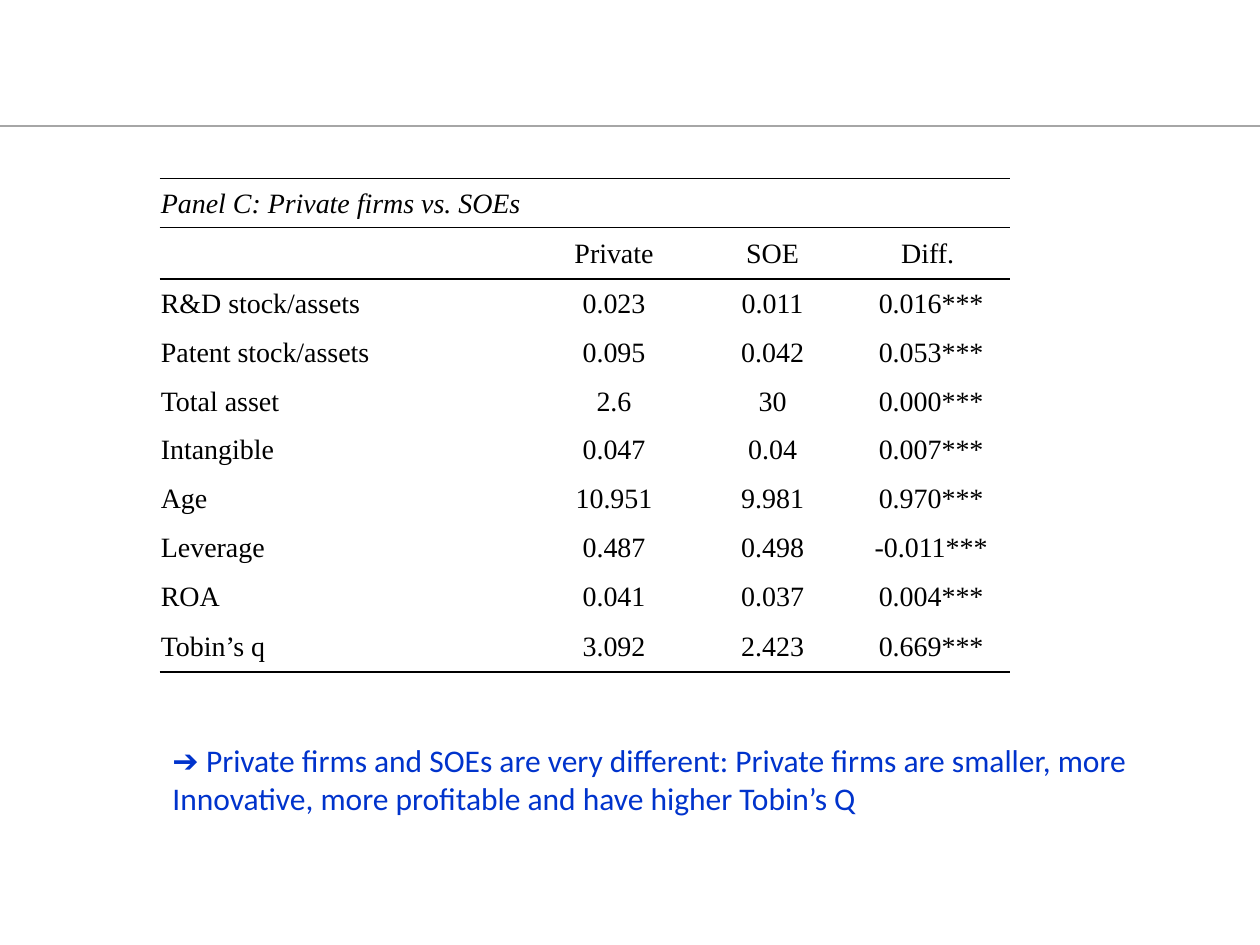
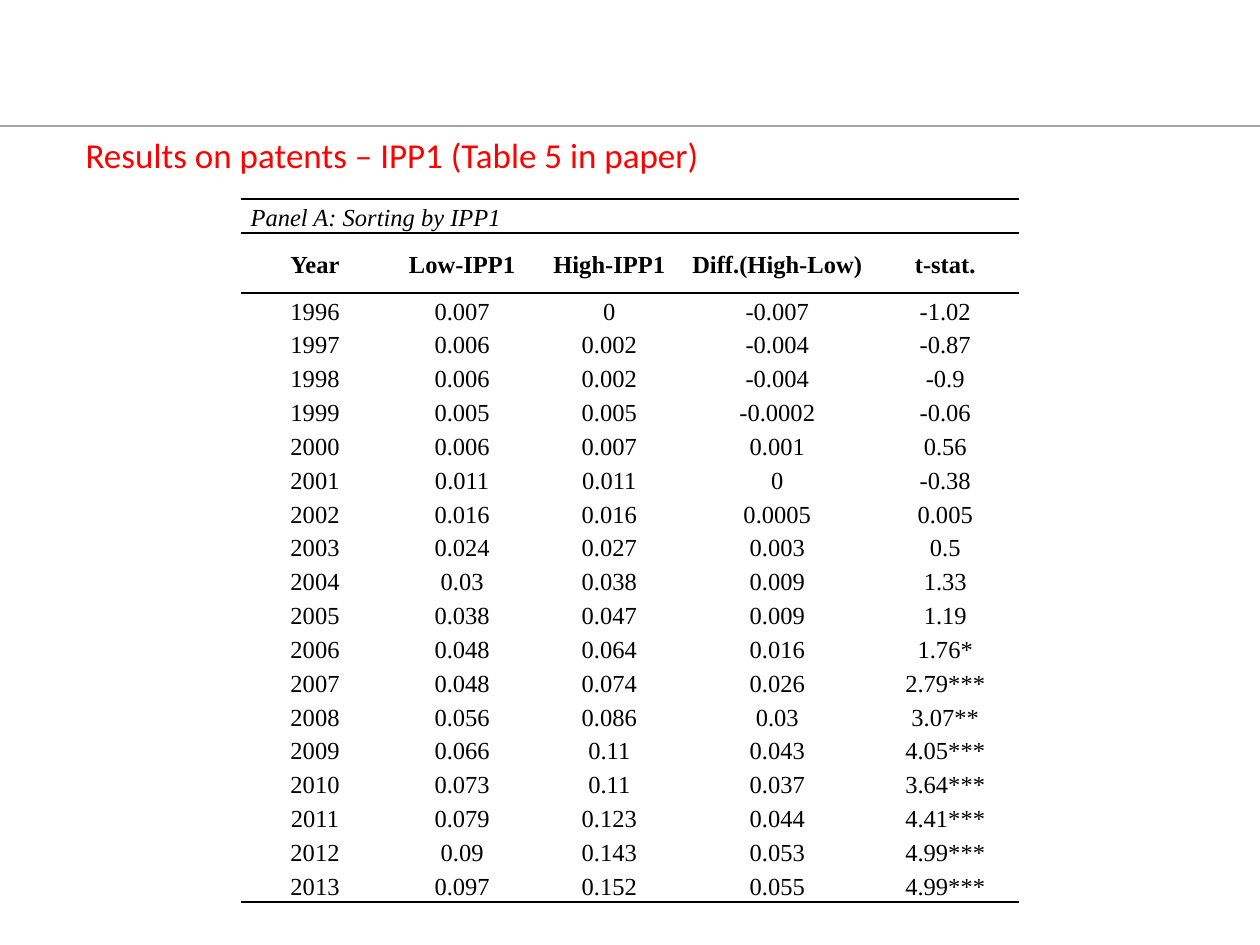
from dataclasses import dataclass

from lxml import etree
from pptx import Presentation
from pptx.dml.color import RGBColor
from pptx.enum.shapes import MSO_CONNECTOR
from pptx.enum.text import MSO_ANCHOR, MSO_AUTO_SIZE, PP_ALIGN
from pptx.oxml.ns import qn
from pptx.util import Pt

STRAIGHT = MSO_CONNECTOR.STRAIGHT
MIDDLE = MSO_ANCHOR.MIDDLE
FIT_SHAPE = MSO_AUTO_SIZE.SHAPE_TO_FIT_TEXT
LEFT, CENTER = PP_ALIGN.LEFT, PP_ALIGN.CENTER


@dataclass(frozen=True)
class Theme:
    ink: str = "000000"
    band: str = "A6A6A6"
    finding: str = "0033CC"
    heading: str = "FF0000"
    text_font: str = "Calibri"
    table_font: str = "Times New Roman"
    heading_size: int = 20
    finding_size: int = 18
    firms_size: int = 16
    patents_size: int = 14


THEME = Theme()
SLIDE_WIDTH, SLIDE_HEIGHT = 720, 540
BAND_TOP = 72


@dataclass(frozen=True)
class TableStyle:
    size: int
    margins: tuple  # left, top, right, bottom
    rules: dict  # row boundary -> line width
    title_span: int
    label_align: PP_ALIGN
    header_bold: bool = False
    line_spacing: float = 1.0


FIRMS_STYLE = TableStyle(THEME.firms_size, (0.75, 0.75, 0.75, 0),
                         {0: 0.5, 1: 0.5, 2: 1, 10: 1}, 4, LEFT)
PATENTS_STYLE = TableStyle(THEME.patents_size, (5.2, 0, 5.2, 0),
                           {0: 1, 1: 1, 2: 1, 20: 1}, 2, CENTER, True, 1.15)

FIRMS_ROWS = [
    ["Panel C: Private firms vs. SOEs", "", "", ""],
    ["", "Private", "SOE", "Diff. "],
    ["R&D stock/assets", "0.023", "0.011", "0.016***"],
    ["Patent stock/assets", "0.095", "0.042", "0.053***"],
    ["Total asset", "2.6", "30", "0.000***"],
    ["Intangible", "0.047", "0.04", "0.007***"],
    ["Age", "10.951", "9.981", "0.970***"],
    ["Leverage", "0.487", "0.498", "-0.011***"],
    ["ROA", "0.041", "0.037", "0.004***"],
    ["Tobin’s q", "3.092", "2.423", "0.669***"],
]

PATENTS_ROWS = [
    ["Panel A: Sorting by IPP1", "", "", "", ""],
    ["Year", "Low-IPP1", "High-IPP1", "Diff.(High-Low)", "t-stat."],
    ["1996", "0.007", "0", "-0.007", "-1.02"],
    ["1997", "0.006", "0.002", "-0.004", "-0.87"],
    ["1998", "0.006", "0.002", "-0.004", "-0.9"],
    ["1999", "0.005", "0.005", "-0.0002", "-0.06"],
    ["2000", "0.006", "0.007", "0.001", "0.56"],
    ["2001", "0.011", "0.011", "0", "-0.38"],
    ["2002", "0.016", "0.016", "0.0005", "0.005"],
    ["2003", "0.024", "0.027", "0.003", "0.5"],
    ["2004", "0.03", "0.038", "0.009", "1.33"],
    ["2005", "0.038", "0.047", "0.009", "1.19"],
    ["2006", "0.048", "0.064", "0.016", "1.76*"],
    ["2007", "0.048", "0.074", "0.026", "2.79***"],
    ["2008", "0.056", "0.086", "0.03", "3.07**"],
    ["2009", "0.066", "0.11", "0.043", "4.05***"],
    ["2010", "0.073", "0.11", "0.037", "3.64***"],
    ["2011", "0.079", "0.123", "0.044", "4.41***"],
    ["2012", "0.09", "0.143", "0.053", "4.99***"],
    ["2013", "0.097", "0.152", "0.055", "4.99***"],
]


def add_page(deck):
    """Add a blank slide with the grey line under the title area."""
    page = deck.slides.add_slide(deck.slide_layouts[6])
    band = page.shapes.add_connector(STRAIGHT, 0, Pt(BAND_TOP), Pt(SLIDE_WIDTH), Pt(BAND_TOP))
    band.line.color.rgb = RGBColor.from_string(THEME.band)
    band.line.width = Pt(1)
    etree.SubElement(band._element.spPr, qn("a:effectLst"))
    return page


def format_span(span, font, size, color):
    span.font.name = font
    span.font.size = Pt(size)
    span.font.color.rgb = RGBColor.from_string(color)


def add_text(page, text, bounds, size, color):
    box = page.shapes.add_textbox(*map(Pt, bounds))
    frame = box.text_frame
    frame.word_wrap = False
    frame.auto_size = FIT_SHAPE
    frame.text = text
    for para in frame.paragraphs:
        for span in para.runs:
            format_span(span, THEME.text_font, size, color)


def set_borders(cell, widths):
    """Draw a border for each side with a width; hide the other sides."""
    properties = cell._tc.get_or_add_tcPr()
    for side in "LRTB":
        line = etree.SubElement(properties, qn(f"a:ln{side}"))
        width = widths.get(side)
        if width:
            line.set("w", str(Pt(width)))
            fill = etree.SubElement(line, qn("a:solidFill"))
            etree.SubElement(fill, qn("a:srgbClr")).set("val", THEME.ink)
        else:
            etree.SubElement(line, qn("a:noFill"))


def fill_cell(cell, text, row, column, style):
    set_borders(cell, {"T": style.rules.get(row), "B": style.rules.get(row + 1)})
    cell.fill.background()
    cell.vertical_anchor = MIDDLE
    (cell.margin_left, cell.margin_top,
     cell.margin_right, cell.margin_bottom) = map(Pt, style.margins)

    para = cell.text_frame.paragraphs[0]
    para.text = text
    para.line_spacing = style.line_spacing
    if row == 0:
        para.alignment = LEFT
    else:
        para.alignment = style.label_align if column == 0 else CENTER
    for span in para.runs:
        format_span(span, THEME.table_font, style.size, THEME.ink)
        span.font.italic = row == 0
        span.font.bold = style.header_bold and row == 1
    if not text:
        # An empty cell needs the table's type size to keep its row low
        end = etree.SubElement(para._p, qn("a:endParaRPr"))
        end.set("sz", str(style.size * 100))


def add_panel(page, rows, left, top, widths, heights, style):
    frame = page.shapes.add_table(len(rows), len(widths), Pt(left), Pt(top),
                                  Pt(sum(widths)), Pt(sum(heights)))
    table = frame.table
    table.first_row = table.horz_banding = False
    for column, width in zip(table.columns, widths):
        column.width = Pt(width)
    for table_row, height in zip(table.rows, heights):
        table_row.height = Pt(height)
    for row, texts in enumerate(rows):
        for column, text in enumerate(texts):
            fill_cell(table.cell(row, column), text, row, column, style)
    table.cell(0, 0).merge(table.cell(0, style.title_span - 1))


def add_firms_page(deck):
    page = add_page(deck)
    add_text(page, "➔ Private firms and SOEs are very different: Private firms are smaller, more\n"
                   "Innovative, more profitable and have higher Tobin’s Q",
             (91.5, 419.8, 573.8, 51), THEME.finding_size, THEME.finding)
    add_panel(page, FIRMS_ROWS, 91.2, 102, [214.4] + [90.6] * 3,
              [27.9, 29.5] + [27.9] * 7 + [29.5], FIRMS_STYLE)


def add_patents_page(deck):
    page = add_page(deck)
    add_text(page, "Results on patents – IPP1 (Table 5 in paper)",
             (41.8, 72.7, 368.6, 31.5), THEME.heading_size, THEME.heading)
    add_panel(page, PATENTS_ROWS, 138, 113.8, [84.1] * 3 + [107.9, 84.1],
              [19.3, 34.2] + [19.3] * 18, PATENTS_STYLE)


def main():
    deck = Presentation()
    deck.slide_width, deck.slide_height = Pt(SLIDE_WIDTH), Pt(SLIDE_HEIGHT)
    add_firms_page(deck)
    add_patents_page(deck)
    deck.save("out.pptx")


if __name__ == "__main__":
    main()
